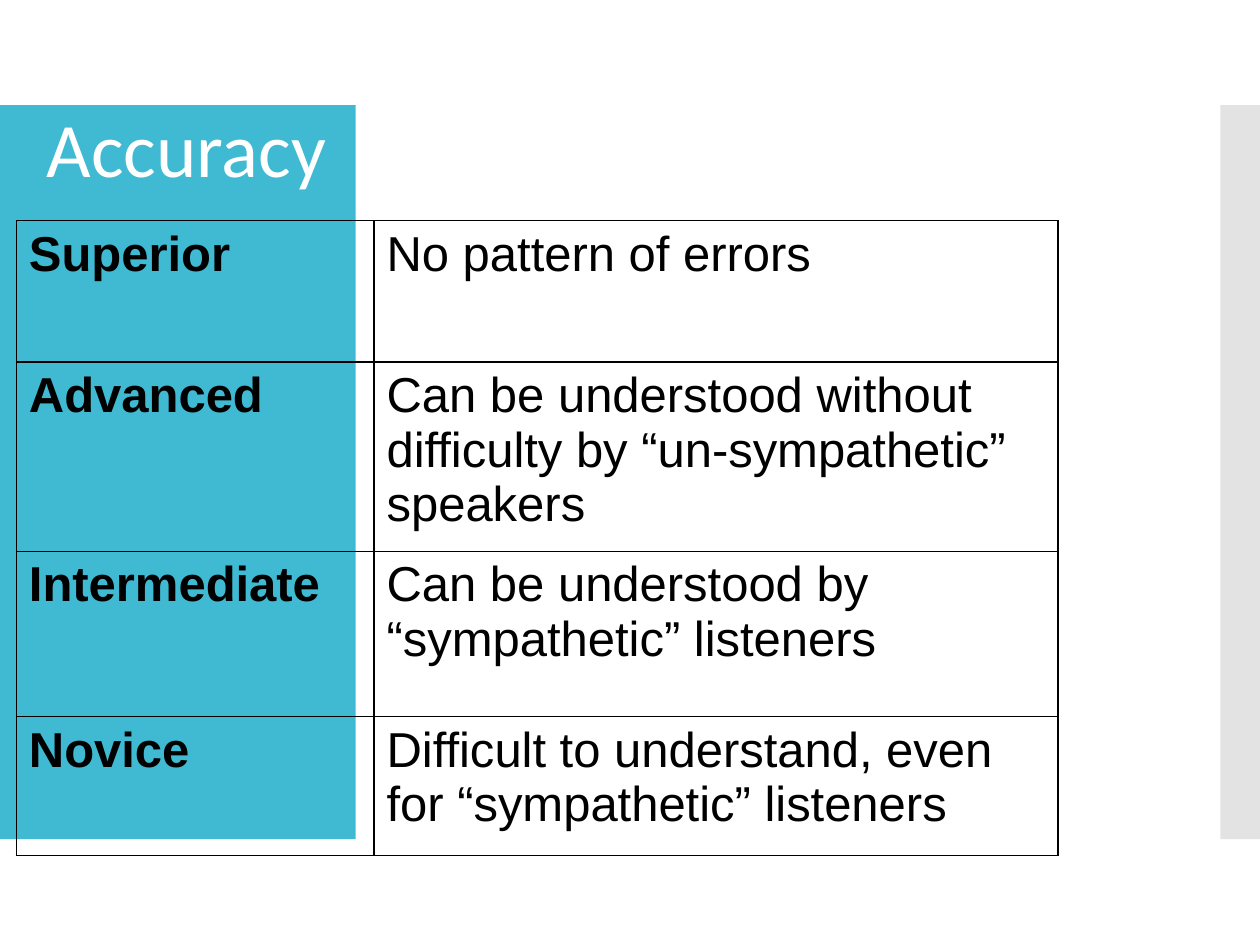
from dataclasses import dataclass

from lxml.etree import SubElement
from pptx import Presentation
from pptx.dml.color import RGBColor
from pptx.enum.shapes import MSO_SHAPE
from pptx.enum.text import MSO_ANCHOR
from pptx.oxml.ns import qn
from pptx.util import Cm, Pt


@dataclass(frozen=True)
class Theme:
    accent: str = "40BAD2"
    edge: str = "C8C8C8"
    title: str = "FFFFFF"
    ink: str = "000000"
    title_font: str = "Calibri"
    body_font: str = "Arial"
    title_size: int = 44
    body_size: int = 28
    rule_width: int = 1


class SlideBuilder:
    def __init__(self, slide, theme):
        self.slide = slide
        self.theme = theme

    def format_text(self, paragraph, font_name, size, color, bold=False):
        for run in paragraph.runs:
            run.font.name = font_name
            run.font.size = Pt(size)
            run.font.bold = bold
            run.font.color.rgb = RGBColor.from_string(color)

    def band(self, left, top, width, height, color, opacity=100):
        band = self.slide.shapes.add_shape(
            MSO_SHAPE.RECTANGLE, Cm(left), Cm(top), Cm(width), Cm(height))
        band.shadow.inherit = False
        band.line.fill.background()
        band.fill.solid()
        band.fill.fore_color.rgb = RGBColor.from_string(color)
        if opacity < 100:
            tone = band.fill._xPr.find(qn("a:solidFill"))[0]
            SubElement(tone, qn("a:alpha"), val=str(opacity * 1000))

    def title(self, text, left, top, width, height):
        frame = self.slide.shapes.add_textbox(
            Cm(left), Cm(top), Cm(width), Cm(height)).text_frame
        frame.word_wrap = True
        frame.vertical_anchor = MSO_ANCHOR.MIDDLE
        frame.text = text
        heading = frame.paragraphs[0]
        heading.line_spacing = 0.9
        self.format_text(heading, self.theme.title_font,
                         self.theme.title_size, self.theme.title)

    def cell_borders(self, cell):
        properties = cell._tc.get_or_add_tcPr()
        for position, side in enumerate(("lnL", "lnR", "lnT", "lnB")):
            rule = SubElement(properties, qn(f"a:{side}"),
                              w=str(Pt(self.theme.rule_width)))
            fill = SubElement(rule, qn("a:solidFill"))
            SubElement(fill, qn("a:srgbClr"), val=self.theme.ink)
            properties.insert(position, rule)

    def table(self, rows, left, top, widths, heights):
        table = self.slide.shapes.add_table(
            len(rows), len(widths), Cm(left), Cm(top),
            Cm(sum(widths)), Cm(sum(heights))).table
        table.first_row = table.horz_banding = False
        for column, width in zip(table.columns, widths):
            column.width = Cm(width)
        for row, height, texts in zip(table.rows, heights, rows):
            row.height = Cm(height)
            for index, (cell, text) in enumerate(zip(row.cells, texts)):
                cell.text_frame.text = text
                cell.fill.background()
                self.cell_borders(cell)
                self.format_text(cell.text_frame.paragraphs[0],
                                 self.theme.body_font, self.theme.body_size,
                                 self.theme.ink, bold=index == 0)


LEVELS = [
    ("Superior", "No pattern of errors"),
    ("Advanced", "Can be understood without difficulty by “un-sympathetic” speakers"),
    ("Intermediate", "Can be understood by “sympathetic” listeners"),
    ("Novice", "Difficult to understand, even for “sympathetic” listeners"),
]


def main():
    presentation = Presentation()
    presentation.slide_width, presentation.slide_height = Cm(25.4), Cm(19.05)
    theme = Theme()
    slide = presentation.slides.add_slide(presentation.slide_layouts[6])
    builder = SlideBuilder(slide, theme)

    # Side bands
    band_top, band_height = 2.12, 14.8
    builder.band(0, band_top, 7.17, band_height, theme.accent)
    builder.band(24.6, band_top, 0.8, band_height, theme.edge, opacity=50)

    # Heading
    builder.title("Accuracy", 0.69, -0.56, 15.37, 7.26)

    # Accuracy by proficiency level
    builder.table(LEVELS, 0.33, 4.45, widths=(7.21, 13.79),
                  heights=(2.85, 2.8, 3.33, 2.8))

    presentation.save("out.pptx")


if __name__ == "__main__":
    main()
